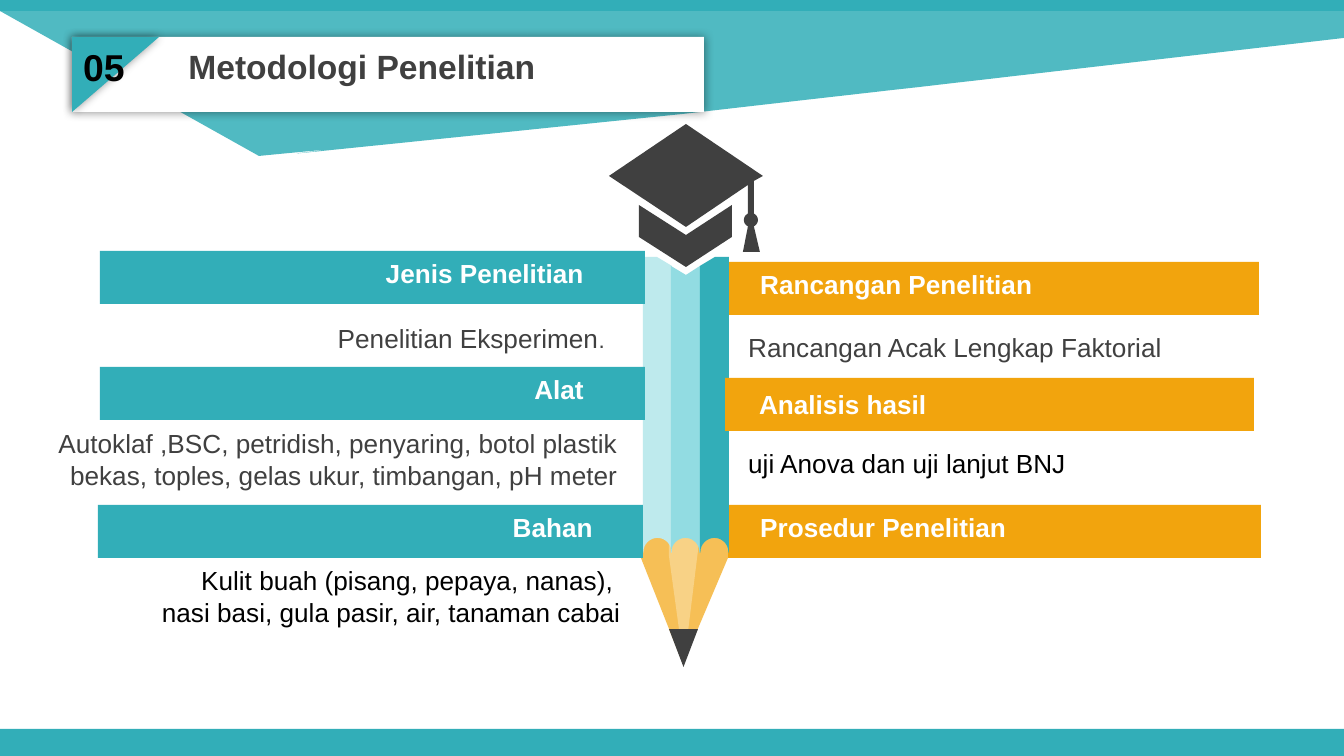
from math import cos, radians, sin

from lxml import etree
from pptx import Presentation
from pptx.dml.color import RGBColor
from pptx.enum.shapes import MSO_SHAPE as Shape
from pptx.enum.text import MSO_ANCHOR as Anchor, PP_ALIGN as Align
from pptx.oxml.ns import qn
from pptx.util import Pt

SCALE = 9144000 / 1344
TEAL, ORANGE, DARK, WHITE, BLACK = "32AEB8", "F2A40D", "404040", "FFFFFF", "000000"
BAR_HEIGHT = 53


def emu(px):
    return round(px * SCALE)


def rgb(value):
    return RGBColor.from_string(value)


def arc(cx, cy, radius, start, end, steps=16):
    """Points of a circular arc; angles in degrees, clockwise from the right."""
    angles = [radians(start + (end - start) * i / steps) for i in range(steps + 1)]
    return [(cx + radius * cos(a), cy + radius * sin(a)) for a in angles]


def bezier(*controls, steps=40):
    """Points of a cubic curve through its four control points."""
    points = []
    for i in range(steps + 1):
        t = i / steps
        weights = ((1 - t) ** 3, 3 * t * (1 - t) ** 2, 3 * t * t * (1 - t), t ** 3)
        points.append(tuple(sum(w * c[axis] for w, c in zip(weights, controls))
                            for axis in (0, 1)))
    return points


class Painter:
    def __init__(self, slide, font="Arial"):
        self.slide = slide
        self.font = font

    def paint(self, shape, color, alpha=None):
        shape.shadow.inherit = False
        shape.fill.solid()
        shape.fill.fore_color.rgb = rgb(color)
        shape.line.fill.background()
        if alpha:
            tint = shape._element.spPr.find(qn("a:solidFill")).find(qn("a:srgbClr"))
            etree.SubElement(tint, qn("a:alpha"), val=str(alpha * 1000))
        return shape

    def preset(self, kind, x, y, width, height, color, rotation=0):
        shape = self.slide.shapes.add_shape(kind, *map(emu, (x, y, width, height)))
        shape.rotation = rotation
        return self.paint(shape, color)

    def outline(self, color, *contours, alpha=None):
        paths = [[(emu(x), emu(y)) for x, y in contour] for contour in contours]
        builder = self.slide.shapes.build_freeform(*paths[0][0])
        builder.add_line_segments(paths[0][1:])
        for points in paths[1:]:
            builder.move_to(*points[0])
            builder.add_line_segments(points[1:])
        return self.paint(builder.convert_to_shape(), color, alpha)

    def glow(self, shape):
        """Soft shadow spread evenly around the shape."""
        effects = shape._element.spPr.find(qn("a:effectLst"))
        shadow = etree.SubElement(effects, qn("a:outerShdw"), blurRad=str(Pt(5)),
                                  dist="0", dir="0", rotWithShape="0")
        tint = etree.SubElement(shadow, qn("a:srgbClr"), val=BLACK)
        etree.SubElement(tint, qn("a:alpha"), val="40000")

    def fill_text(self, shape, text, color, size=14, bold=False, align=Align.LEFT,
                  anchor=Anchor.TOP):
        frame = shape.text_frame
        frame.text = text
        frame.word_wrap = True
        frame.vertical_anchor = anchor
        for paragraph in frame.paragraphs:
            paragraph.alignment = align
            for run in paragraph.runs:
                self.style(run, color, size, bold)
        return frame

    def style(self, run, color, size, bold=False):
        run.font.name = self.font
        run.font.size = Pt(size)
        run.font.bold = bold
        run.font.color.rgb = rgb(color)

    def text(self, x, y, width, height, text, color, **options):
        box = self.slide.shapes.add_textbox(*map(emu, (x, y, width, height)))
        return self.fill_text(box, text, color, **options)

    def title(self, x, y, width, height, text, color, **options):
        title = self.slide.shapes.title
        title.left, title.top, title.width, title.height = map(emu, (x, y, width, height))
        self.fill_text(title, text, color, **options)
        title._element.getparent().append(title._element)


def draw_background(painter):
    painter.preset(Shape.RECTANGLE, 0, 729, 1344, 27, TEAL)
    painter.preset(Shape.RECTANGLE, 0, 0, 1344, 11, TEAL)
    fold, middle, end = (259, 156), (683, 114), (1344, 38)
    painter.outline(TEAL, [(1344, 11), (0, 11)]
                    + bezier(fold, (487, 134), (-7, 185), middle)
                    + bezier(middle, (1163, 59), (591, 125), end), alpha=85)


def draw_pencil(painter):
    painter.outline("F6BF56", [(641, 538), (728, 538), (728, 558), (683, 664), (641, 558)])
    painter.outline("F8D286", [(669, 536), (698, 536), (698, 551), (684, 665), (669, 556)])
    bands = [("BEEAED", 643, [(643, 257), (657, 257), (672, 266)]),
             ("92DCE2", 671, [(671, 266), (686, 275), (700, 266)]),
             (TEAL, 700, [(700, 266), (715, 257), (729, 257)])]
    for color, left, top in bands:
        right = left + 29
        arch = arc(left + 14.5, 552, 14, 0, -180)
        painter.outline(color, top + [(right, 553)] + arch + [(left, 553)])
    painter.preset(Shape.ISOSCELES_TRIANGLE, 669, 629, 29, 38, DARK, 180)


def draw_cap(painter):
    band = [(639, 205), (686, 235), (732, 205), (732, 237), (686, 267), (639, 237)]
    board = ([(686, 124), (763, 176), (754, 181)]
             + arc(751, 220, 7, -65, 65) + [(760, 252), (743, 252)]
             + arc(751, 220, 7, 115, 245) + [(748, 185), (686, 227), (609, 176)])
    painter.outline(DARK, band, board)


def draw_topics(painter):
    left_topics = [(100, 251, 249, "Jenis Penelitian"), (100, 367, 249, "Alat"),
                   (98, 505, 258, "Bahan")]
    for bar_x, y, heading_x, heading in left_topics:
        painter.preset(Shape.RECTANGLE, bar_x, y, 545, BAR_HEIGHT, TEAL)
        painter.text(heading_x, y, 348, 45, heading, WHITE, bold=True, align=Align.RIGHT)

    for y, heading in [(262, "Rancangan Penelitian"), (505, "Prosedur Penelitian")]:
        painter.text(747, y, 348, 45, heading, WHITE, bold=True)
    analysis = painter.preset(Shape.RECTANGLE, 725, 378, 529, BAR_HEIGHT, ORANGE)
    painter.fill_text(analysis, "Analisis hasil", WHITE, bold=True,
                      anchor=Anchor.MIDDLE).margin_left = emu(34)

    kind = painter.text(137, 316, 481, 45, "Penelitian Eksperimen", DARK, align=Align.RIGHT)
    full_stop = kind.paragraphs[0].add_run()
    full_stop.text = "."
    painter.style(full_stop, DARK, 12)
    painter.text(38, 421, 593, 77, "Autoklaf ,BSC, petridish, penyaring, botol plastik \n"
                 "bekas, toples, gelas ukur, timbangan, pH meter", DARK, align=Align.RIGHT)
    painter.text(142, 558, 492, 103, "Kulit buah (pisang, pepaya, nanas), \n"
                 "nasi basi, gula pasir, air, tanaman cabai", BLACK, align=Align.RIGHT)
    painter.text(735, 325, 481, 45, "Rancangan Acak Lengkap Faktorial", DARK)
    painter.text(735, 441, 481, 45, "uji Anova dan uji lanjut BNJ", BLACK)


def draw_header(painter):
    painter.glow(painter.preset(Shape.RECTANGLE, 72, 37, 632, 75, WHITE))
    painter.glow(painter.preset(Shape.RIGHT_TRIANGLE, 78, 31, 75, 87, TEAL, 90))
    painter.text(70, 38, 78, 59, "05", BLACK, size=20, bold=True)
    painter.title(175, 39, 645, 54, "Metodologi Penelitian", DARK, size=18, bold=True)


def main():
    deck = Presentation()
    deck.slide_width, deck.slide_height = emu(1344), emu(756)
    painter = Painter(deck.slides.add_slide(deck.slide_layouts[5]))
    draw_background(painter)
    for x, y in [(714, 262), (716, 505)]:
        painter.preset(Shape.RECTANGLE, x, y, 545, BAR_HEIGHT, ORANGE)
    draw_pencil(painter)
    draw_cap(painter)
    draw_topics(painter)
    draw_header(painter)
    deck.save("out.pptx")


if __name__ == "__main__":
    main()
